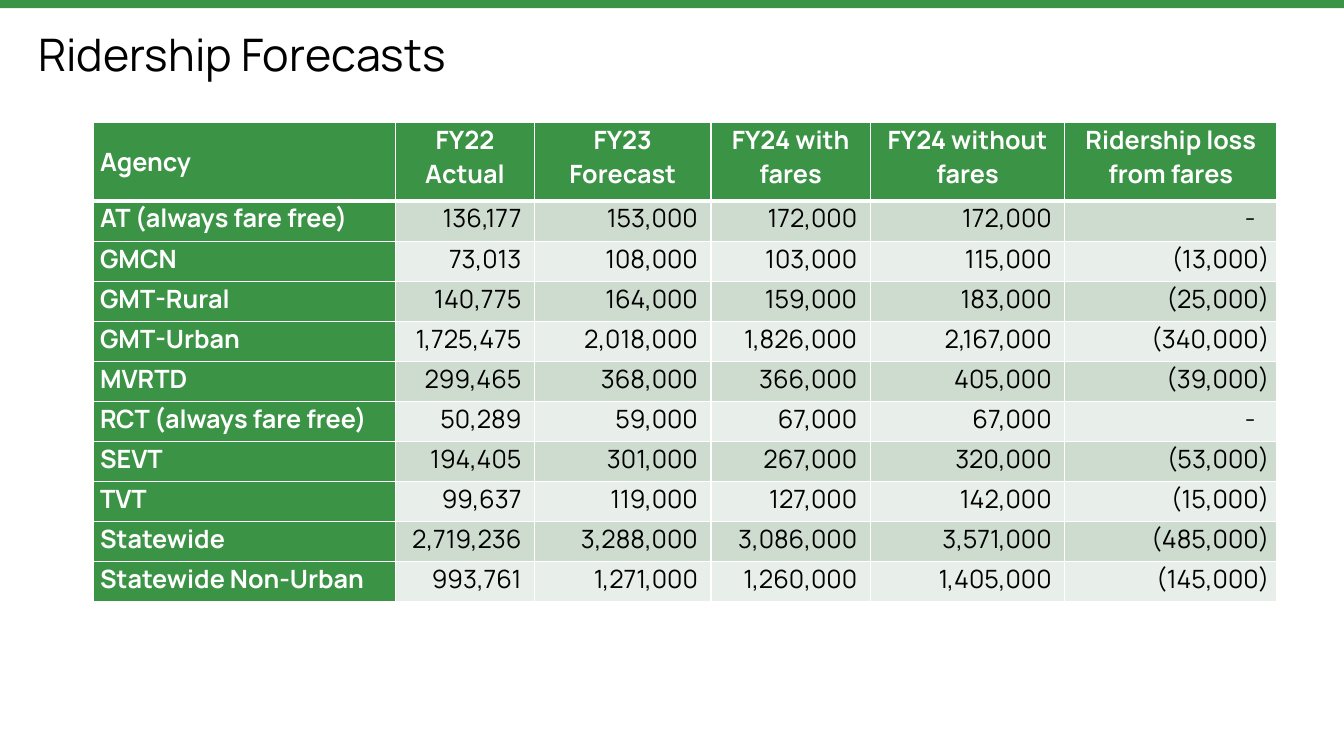
from lxml.etree import SubElement as Sub
from pptx import Presentation
from pptx.dml.color import RGBColor as RGB
from pptx.enum.shapes import MSO_SHAPE as SHAPE
from pptx.enum.text import MSO_ANCHOR as ANCHOR, PP_ALIGN as ALIGN
from pptx.oxml.ns import qn
from pptx.util import Inches, Pt

GREEN = RGB(0x3B, 0x93, 0x45)
DARK = RGB(0xCE, 0xDC, 0xCF)
LIGHT = RGB(0xE8, 0xEE, 0xE9)
WHITE = RGB(0xFF, 0xFF, 0xFF)
BLACK = RGB(0, 0, 0)

HEADS = ["Agency", "FY22 Actual", "FY23 Forecast", "FY24 with fares",
         "FY24 without fares", "Ridership loss from fares"]
ROWS = [
    ["AT (always fare free)", "136,177", "153,000", "172,000", "172,000", "-"],
    ["GMCN", "73,013", "108,000", "103,000", "115,000", "(13,000)"],
    ["GMT-Rural", "140,775", "164,000", "159,000", "183,000", "(25,000)"],
    ["GMT-Urban", "1,725,475", "2,018,000", "1,826,000", "2,167,000", "(340,000)"],
    ["MVRTD", "299,465", "368,000", "366,000", "405,000", "(39,000)"],
    ["RCT (always fare free)", "50,289", "59,000", "67,000", "67,000", "-"],
    ["SEVT", "194,405", "301,000", "267,000", "320,000", "(53,000)"],
    ["TVT", "99,637", "119,000", "127,000", "142,000", "(15,000)"],
    ["Statewide", "2,719,236", "3,288,000", "3,086,000", "3,571,000", "(485,000)"],
    ["Statewide Non-Urban", "993,761", "1,271,000", "1,260,000", "1,405,000", "(145,000)"],
]
SHARES = [300, 138, 175, 158, 193, 210]

deck = Presentation()
deck.slide_width, deck.slide_height = Inches(13.33), Inches(7.5)
WIDE, HIGH = deck.slide_width, deck.slide_height
slide = deck.slides.add_slide(deck.slide_layouts[6])


def area(x, y, w, h):
    return [int(side * part / 100)
            for side, part in zip((WIDE, HIGH, WIDE, HIGH), (x, y, w, h))]


def write(para, text, size, color, bold=False):
    run = para.add_run()
    run.text = text
    font = run.font
    font.name, font.size, font.bold = "Manrope", Pt(size), bold
    font.color.rgb = color


bar = slide.shapes.add_shape(SHAPE.RECTANGLE, *area(0, 0, 100, 1.07))
bar.shadow.inherit = False
bar.fill.solid()
bar.fill.fore_color.rgb = GREEN
bar.line.fill.background()

title = slide.shapes.add_textbox(*area(2.85, 4.4, 94.37, 6.4)).text_frame
title.word_wrap = True
title.vertical_anchor = ANCHOR.MIDDLE
title.margin_left = title.margin_right = title.margin_top = title.margin_bottom = 0
title.paragraphs[0].line_spacing = 0.9
write(title.paragraphs[0], "Ridership Forecasts", 32, BLACK)

left, top, width, height = area(6.92, 16.2, 88.07, 63.47)
table = slide.shapes.add_table(len(ROWS) + 1, len(HEADS), left, top, width, height).table
for col, share in zip(table.columns, SHARES):
    col.width = int(width * share / sum(SHARES))
head = int(height * 78 / 476)
rest = int((height - head) / len(ROWS))

for r, texts in enumerate([HEADS] + ROWS):
    table.rows[r].height = rest if r else head
    for c, text in enumerate(texts):
        cell = table.cell(r, c)
        label = r == 0 or c == 0
        gap = 0.21 if text == "-" else 0.13 if r and 0 < c < 5 else 0.07
        cell.margin_left, cell.margin_right = Inches(0.07), Inches(gap)
        cell.margin_top = cell.margin_bottom = 0
        cell.vertical_anchor = ANCHOR.TOP if r or c else ANCHOR.MIDDLE
        para = cell.text_frame.paragraphs[0]
        para.alignment = ALIGN.LEFT if c == 0 else ALIGN.RIGHT if r else ALIGN.CENTER
        para.space_after = Pt(10)
        write(para, text, 18, WHITE if label else BLACK, label)
        props = cell._tc.get_or_add_tcPr()
        for side in "LRTB":
            thick = (r, side) in [(0, "B"), (1, "T")]
            line = Sub(props, qn("a:ln" + side), w=str(Pt(3 if thick else 1)))
            Sub(Sub(line, qn("a:solidFill")), qn("a:srgbClr"), val=str(WHITE))
        cell.fill.solid()
        cell.fill.fore_color.rgb = GREEN if label else DARK if r % 2 else LIGHT

deck.save("out.pptx")
